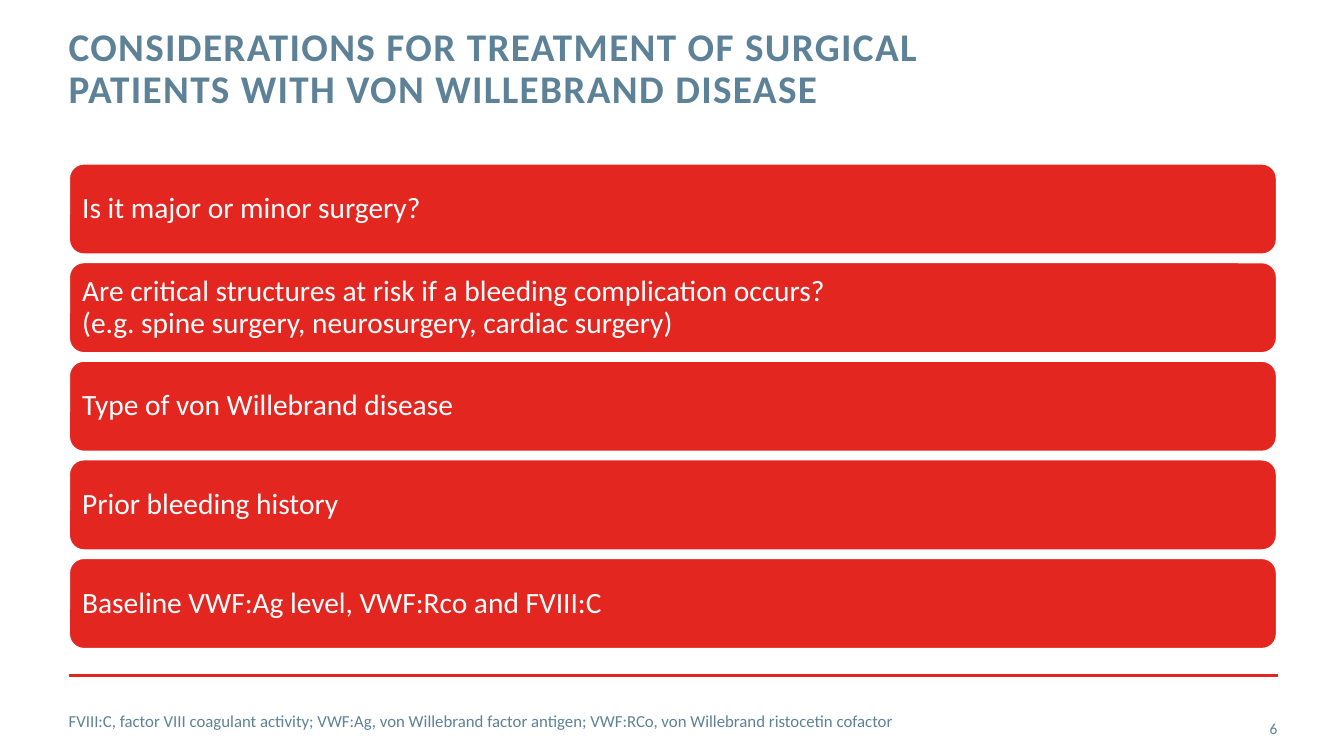
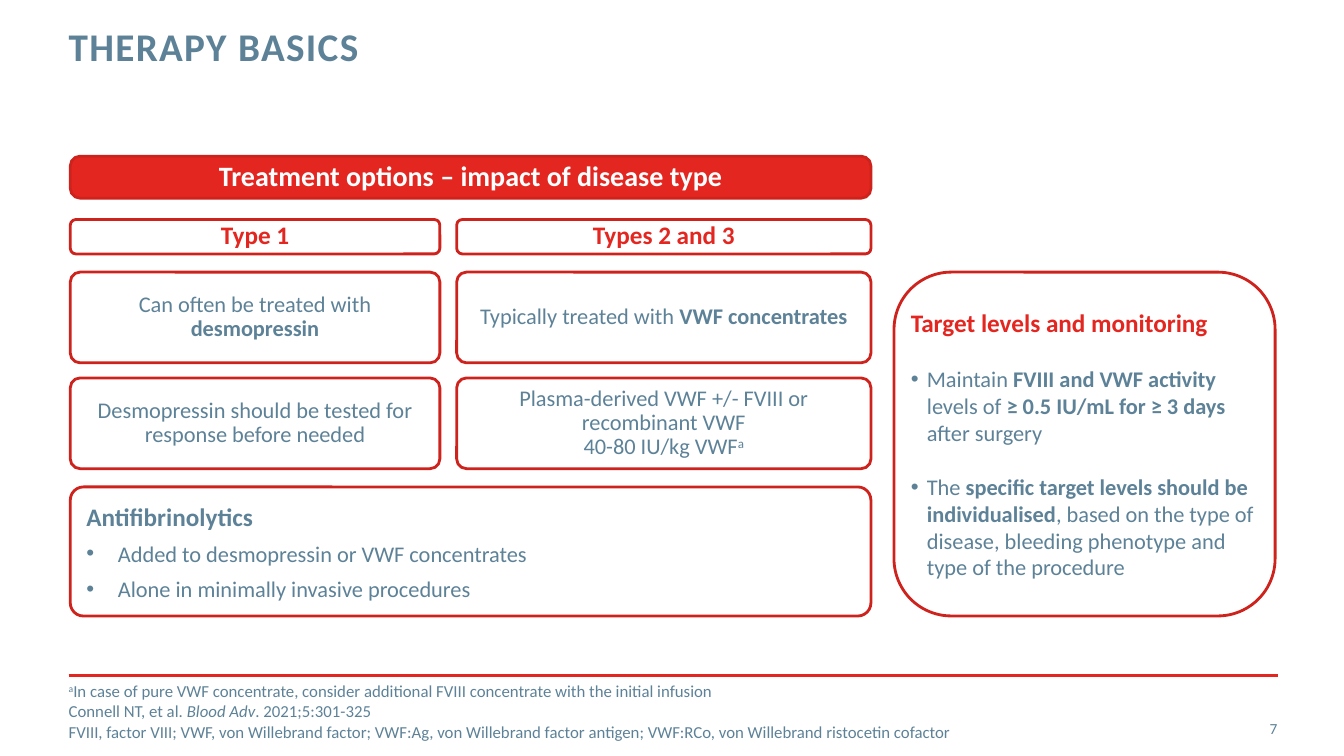
from pptx import Presentation
from pptx.dml.color import RGBColor
from pptx.enum.shapes import MSO_CONNECTOR, MSO_SHAPE
from pptx.enum.text import MSO_ANCHOR, MSO_AUTO_SIZE, PP_ALIGN
from pptx.oxml.ns import qn
from pptx.util import Pt
from lxml import etree

RED = RGBColor(0xE3, 0x26, 0x20)
DARK_RED = RGBColor(0xCE, 0x22, 0x1D)
SLATE = RGBColor(0x5D, 0x82, 0x98)
WHITE = RGBColor(0xFF, 0xFF, 0xFF)
FONT = "Calibri"

ROUNDED = MSO_SHAPE.ROUNDED_RECTANGLE
STRAIGHT = MSO_CONNECTOR.STRAIGHT
TOP, MIDDLE = MSO_ANCHOR.TOP, MSO_ANCHOR.MIDDLE
LEFT, CENTER, RIGHT = PP_ALIGN.LEFT, PP_ALIGN.CENTER, PP_ALIGN.RIGHT
NO_FIT = MSO_AUTO_SIZE.NONE

BOLD = {"bold": True}
ITALIC = {"italic": True}
SUPER = {"baseline": "30000"}

MARGIN = 49
RULE_Y = 482.4
RULE_END = 913


def set_attrs(obj, values):
    for name, value in values.items():
        setattr(obj, name, value)


def set_bullet(p, indent):
    pPr = p._p.get_or_add_pPr()
    pPr.set("marL", str(Pt(indent)))
    pPr.set("indent", str(-Pt(indent)))
    etree.SubElement(pPr, qn("a:buFont")).set("typeface", "Arial")
    etree.SubElement(pPr, qn("a:buChar")).set("char", "•")


def add_runs(p, runs, fmt):
    for text, extra in [(runs, {})] if isinstance(runs, str) else runs:
        r = p.add_run()
        r.text = text
        values = {"name": FONT, **fmt, **extra}
        xml_values = {k: values.pop(k) for k in ("baseline", "spc") if k in values}
        color = values.pop("color")
        values["size"] = Pt(values["size"])
        set_attrs(r.font, values)
        r.font.color.rgb = color
        for name, value in xml_values.items():
            r._r.get_or_add_rPr().set(name, value)


def write(sp, paras, fmt, insets=(0, 0, 0, 0), anchor=MIDDLE, align=LEFT, spacing=None):
    tf = sp.text_frame
    left, top, right, bottom = (Pt(v) for v in insets)
    set_attrs(tf, {"word_wrap": True, "auto_size": NO_FIT, "vertical_anchor": anchor,
                   "margin_left": left, "margin_top": top,
                   "margin_right": right, "margin_bottom": bottom})
    for i, para in enumerate(paras):
        p = tf.paragraphs[0] if i == 0 else tf.add_paragraph()
        para = para if isinstance(para, dict) else {"runs": para}
        if "indent" in para:
            set_bullet(p, para["indent"])
        set_attrs(p, {"alignment": align, "line_spacing": spacing,
                      "space_before": Pt(para.get("before", 0)),
                      "space_after": Pt(para.get("after", 0))})
        add_runs(p, para["runs"], {**fmt, **para.get("fmt", {})})


def add_text(s, box, paras, fmt, **layout):
    write(s.shapes.add_textbox(*(Pt(v) for v in box)), paras, fmt, **layout)


def add_card(s, box, paras, fmt, radius, fill=WHITE, line=DARK_RED, **layout):
    sp = s.shapes.add_shape(ROUNDED, *(Pt(v) for v in box))
    sp.adjustments[0] = radius / min(box[2:])
    sp.shadow.inherit = False
    sp.fill.solid()
    sp.fill.fore_color.rgb = fill
    sp.line.color.rgb = line
    sp.line.width = Pt(2)
    write(sp, paras, fmt, **layout)


def add_frame(prs, title, number, footnote, footnote_box):
    s = prs.slides.add_slide(prs.slide_layouts[5])
    rule = s.shapes.add_connector(STRAIGHT, Pt(MARGIN), Pt(RULE_Y), Pt(RULE_END), Pt(RULE_Y))
    rule.line.color.rgb = RED
    rule.line.width = Pt(2)
    etree.SubElement(rule._element.spPr, qn("a:effectLst"))
    sp = s.shapes.title
    set_attrs(sp, {"left": Pt(MARGIN), "top": Pt(19.5), "width": Pt(688), "height": Pt(63)})
    write(sp, [title], {"size": 28, "color": SLATE, "bold": True, "spc": "100"},
          anchor=TOP, spacing=Pt(30))
    add_text(s, footnote_box, footnote, {"size": 12, "color": SLATE})
    add_text(s, (850.4, 506.2, 62, 28.8), [number], {"size": 11, "color": SLATE}, align=RIGHT)
    return s


def add_considerations(s, box, items):
    x, y, w, h = box
    gap = 5
    row_h = (h - gap * (len(items) - 1)) / len(items)
    for i, paras in enumerate(items):
        add_card(s, (x, y + i * (row_h + gap), w, row_h), paras,
                 {"size": 21, "color": WHITE}, 10.9, fill=RED, line=WHITE,
                 insets=(6.5, 3, 6.5, 3), spacing=0.9)


def add_treatment_grid(s, box, header, columns, extra):
    x, y, w, h = box
    gap, left_w = 12, 264
    centred = {"insets": (4.5, 3, 4.5, 3), "align": CENTER, "spacing": 0.9}
    add_card(s, (x, y, w, 30), [header],
             {"size": 20, "color": WHITE, "bold": True}, 7, fill=RED, **centred)
    spans = [(x, left_w), (x + left_w + gap, w - left_w - gap)]
    for (col_x, col_w), (name, cards) in zip(spans, columns):
        add_card(s, (col_x, y + 45.2, col_w, 24.6), [name],
                 {"size": 18, "color": RED, "bold": True}, 4, **centred)
        for i, paras in enumerate(cards):
            add_card(s, (col_x, y + 82.8 + i * 75.6, col_w, 64.8), paras,
                     {"size": 16, "color": SLATE}, 7, **centred)
    extra_h = 92.2
    add_card(s, (x, y + h - extra_h, w, extra_h), extra,
             {"size": 16, "color": SLATE}, 9.4, insets=(8.8, 4, 4, 4))


def add_targets(s, box, heading, points):
    first = {"runs": heading, "fmt": {"size": 18, "color": RED, "bold": True}}
    bullets = [{"runs": runs, "indent": 11.5, "before": 19.5} for runs in points]
    add_card(s, box, [first] + bullets, {"size": 16, "color": SLATE},
             min(box[2:]) / 6, insets=(0, 6.5, 0, 6.5))


def build_considerations(prs):
    s = add_frame(
        prs, "CONSIDERATIONS FOR TREATMENT OF SURGICAL PATIENTS WITH VON WILLEBRAND DISEASE", "6",
        ["FVIII:C, factor VIII coagulant activity; VWF:Ag, von Willebrand factor antigen; "
         "VWF:RCo, von Willebrand ristocetin cofactor"],
        (MARGIN, 500.4, 639.4, 28.8))
    add_considerations(s, (MARGIN, 116.6, 863.3, 347.2), [
        ["Is it major or minor surgery?"],
        ["Are critical structures at risk if a bleeding complication occurs?",
         "(e.g. spine surgery, neurosurgery, cardiac surgery)"],
        ["Type of von Willebrand disease"],
        ["Prior bleeding history"],
        ["Baseline VWF:Ag level, VWF:Rco and FVIII:C"],
    ])


def build_therapy(prs):
    s = add_frame(
        prs, "THERAPY BASICS", "7",
        [[("a", SUPER), ("In case of pure VWF concentrate, consider additional FVIII "
                         "concentrate with the initial infusion", {})],
         [("Connell NT, et al. ", {}), ("Blood Adv", ITALIC), (". 2021;5:301-325", {})],
         "FVIII, factor VIII; VWF, von Willebrand factor; VWF:Ag, von Willebrand factor "
         "antigen; VWF:RCo, von Willebrand ristocetin cofactor"],
        (MARGIN, 481, 639.4, 54))
    columns = [
        ("Type 1", [
            [[("Can often be treated with ", {}), ("desmopressin", BOLD)]],
            ["Desmopressin should be tested for response before needed"]]),
        ("Types 2 and 3", [
            [[("Typically treated with ", {}), ("VWF concentrates", BOLD)]],
            ["Plasma-derived VWF +/- FVIII or recombinant VWF",
             [("40-80 IU/kg VWF", {}), ("a", SUPER)]]]),
    ]
    extra = [{"runs": "Antifibrinolytics", "after": 6, "fmt": {"size": 18, "bold": True}}]
    extra += [{"runs": text, "after": 6, "indent": 22.5} for text in (
        "Added to desmopressin or VWF concentrates",
        "Alone in minimally invasive procedures")]
    add_treatment_grid(s, (50.2, 111.6, 571.9, 328.4),
                       "Treatment options – impact of disease type", columns, extra)
    add_targets(s, (638.6, 194.4, 272.2, 245.6), "Target levels and monitoring", [
        [("Maintain", {}), (" FVIII and VWF activity ", BOLD), ("levels of ", {}),
         ("≥ 0.5 IU/mL for ≥ 3 days ", BOLD), ("after surgery", {})],
        [("The", {}), (" specific target levels should be individualised", BOLD),
         (", based on the type of disease, bleeding phenotype and type of the procedure", {})],
    ])


def main():
    prs = Presentation()
    set_attrs(prs, {"slide_width": Pt(960), "slide_height": Pt(540)})
    build_considerations(prs)
    build_therapy(prs)
    prs.save("out.pptx")


if __name__ == "__main__":
    main()
